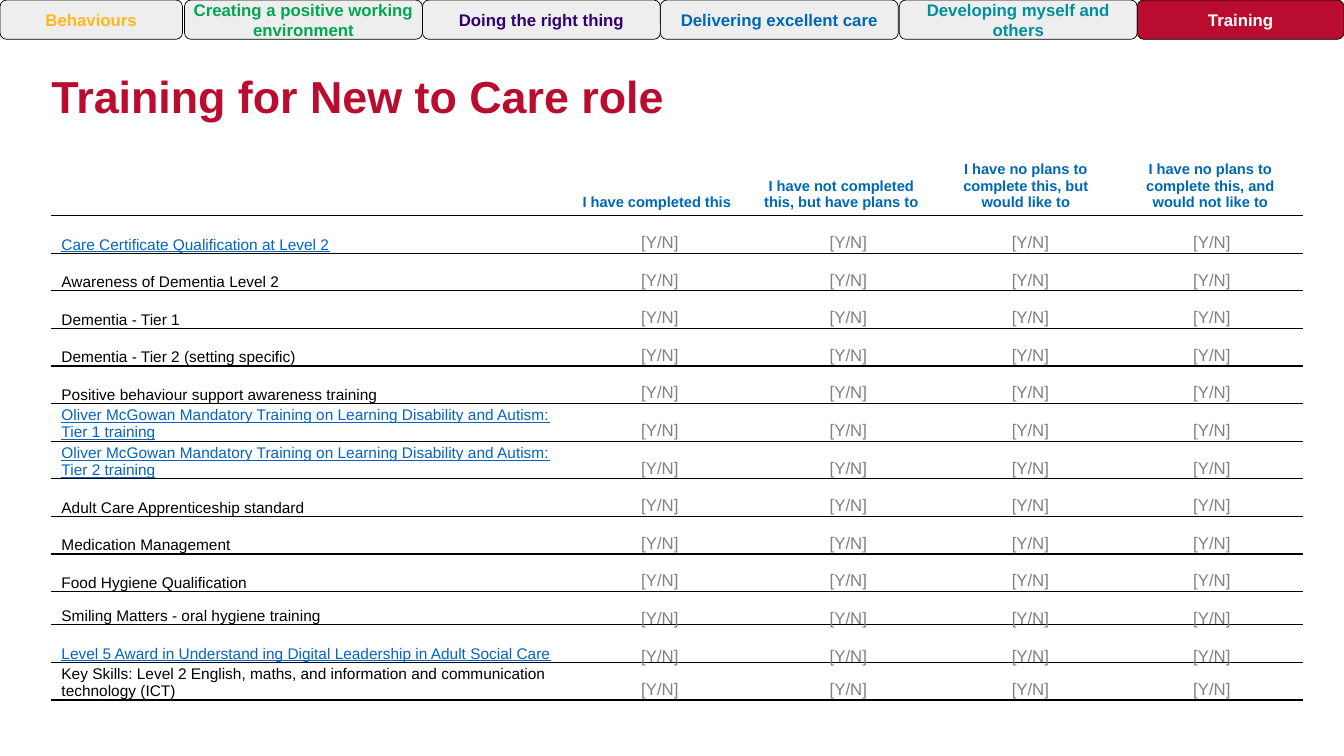
from pptx import Presentation
from pptx.dml.color import RGBColor
from pptx.enum.shapes import MSO_SHAPE
from pptx.enum.text import MSO_ANCHOR, MSO_AUTO_SIZE, PP_ALIGN
from pptx.oxml.ns import qn
from pptx.util import Inches, Pt
from lxml.etree import SubElement

RED = "BA0C2F"
BLUE = "0068B3"
LINK = "0563C1"
BLACK = "000000"
GREY = "CACACA"
ROW = 3.73 / 10

TABS = [
    ("Behaviours", 0, 1.81, "FFB81C"),
    ("Creating a positive working environment", 1.83, 2.36, "00A651"),
    ("Doing the right thing", 4.19, 2.36, "330072"),
    ("Delivering excellent care", 6.55, 2.36, BLUE),
    ("Developing myself and others", 8.92, 2.36, "008F9C"),
    ("Training", 11.28, 2.05, "FFFFFF"),
]
HEADS = [
    "",
    "I have completed this",
    "I have not completed this, but have plans to",
    "I have no plans to complete this, but would like to",
    "I have no plans to complete this, and would not like to",
]
COURSES = [
    ("Care Certificate Qualification at Level 2", LINK),
    ("Awareness of Dementia Level 2", BLACK),
    ("Dementia - Tier 1", BLACK),
    ("Dementia - Tier 2 (setting specific)", BLACK),
    ("Positive behaviour support awareness training", BLACK),
    ("Oliver McGowan Mandatory Training on Learning Disability and Autism: Tier 1 training", LINK),
    ("Oliver McGowan Mandatory Training on Learning Disability and Autism: Tier 2 training", LINK),
    ("Adult Care Apprenticeship standard", BLACK),
    ("Medication Management", BLACK),
    ("Food Hygiene Qualification", BLACK),
    ("Smiling Matters - oral hygiene training", BLACK),
    ("Level 5 Award in Understand ing Digital Leadership in Adult Social Care", LINK),
    ("Key Skills: Level 2 English, maths, and information and communication technology (ICT)", BLACK),
]
ANSWERS = [(5.67, 1.75), (7.5, 1.83), (9.42, 1.6), (11.22, 1.6)]


def color(code):
    return RGBColor.from_string(code)


def write(frame, text, size, code, bold=False, align=PP_ALIGN.CENTER):
    frame.text = text
    para = frame.paragraphs[0]
    para.alignment = align
    for run in para.runs:
        run.font.name = "Arial"
        run.font.size = Pt(size)
        run.font.bold = bold
        run.font.color.rgb = color(code)
        run.font.underline = code == LINK


def inset(item, left, top, right, bottom):
    item.margin_left, item.margin_top = Inches(left), Inches(top)
    item.margin_right, item.margin_bottom = Inches(right), Inches(bottom)


def add_tab(slide, text, left, width, code, active):
    tab = slide.shapes.add_shape(
        MSO_SHAPE.ROUNDED_RECTANGLE, Inches(left), 0, Inches(width), Inches(0.39))
    tab.shadow.inherit = False
    tab.fill.solid()
    tab.fill.fore_color.rgb = color(RED if active else GREY)
    if not active:
        tint = tab.fill._xPr.find(qn("a:solidFill"))[0]
        SubElement(tint, qn("a:alpha"), val="30000")
    tab.line.color.rgb = color(BLACK)
    tab.line.width = Pt(0.5)
    frame = tab.text_frame
    frame.word_wrap = True
    frame.vertical_anchor = MSO_ANCHOR.MIDDLE
    inset(frame, 0, 0.05, 0, 0.05)
    write(frame, text, 12, code, True)


def rule(cell, sides):
    props = cell._tc.get_or_add_tcPr()
    for side in ("lnL", "lnR", "lnT", "lnB"):
        line = SubElement(props, qn("a:" + side), w=str(Pt(1)))
        if side in sides:
            paint = SubElement(line, qn("a:solidFill"))
            SubElement(paint, qn("a:srgbClr"), val=BLACK)
        else:
            SubElement(line, qn("a:noFill"))


def add_grid(slide):
    frame = slide.shapes.add_table(
        len(COURSES) + 1, len(HEADS), Inches(0.51), Inches(1.5), Inches(12.41), Inches(5.45))
    table = frame.table
    table.first_row = False
    table.horz_banding = False
    for spot, col in enumerate(table.columns):
        col.width = Inches(1.83 if spot else 5.09)
    for spot, row in enumerate(table.rows):
        row.height = Inches(ROW if spot else 0.64)
        for cell in row.cells:
            rule(cell, ("lnT", "lnB") if spot else ("lnB",))
            cell.vertical_anchor = MSO_ANCHOR.BOTTOM
            inset(cell, 0.1, 0.01, 0.01, 0)
            if spot:
                cell.fill.background()
            else:
                cell.fill.solid()
                cell.fill.fore_color.rgb = color("FFFFFF")
    table.rows[11].height = Inches(0.33)
    for spot, head in enumerate(HEADS):
        cell = table.cell(0, spot)
        inset(cell, 0.11, 0.05, 0.11, 0.05)
        write(cell.text_frame, head, 10.5, BLUE, True)
    for spot, (name, code) in enumerate(COURSES, 1):
        write(table.cell(spot, 0).text_frame, name, 11, code, align=PP_ALIGN.LEFT)


def add_answer(slide, left, top, width):
    box = slide.shapes.add_textbox(Inches(left), Inches(top), Inches(width), Inches(0.3))
    box.text_frame.word_wrap = True
    write(box.text_frame, "[Y/N]", 12, "808080")


def set_title(slide, text):
    title = slide.shapes.title
    title.left, title.top = Inches(0.41), Inches(0.58)
    title.width, title.height = Inches(6.4), Inches(0.69)
    frame = title.text_frame
    frame.auto_size = MSO_AUTO_SIZE.NONE
    frame.word_wrap = True
    frame.vertical_anchor = MSO_ANCHOR.TOP
    inset(frame, 0.1, 0.1, 0.1, 0.1)
    write(frame, text, 32, RED, True, PP_ALIGN.LEFT)


def main():
    deck = Presentation()
    deck.slide_width, deck.slide_height = Inches(13.33), Inches(7.5)
    slide = deck.slides.add_slide(deck.slide_layouts[5])
    set_title(slide, "Training for New to Care role")
    for text, left, width, code in TABS:
        add_tab(slide, text, left, width, code, text == "Training")
    add_grid(slide)
    for spot in range(len(COURSES)):
        top = min(2.25 + spot * ROW, 6.68)
        for left, width in ANSWERS:
            add_answer(slide, left, top, width)
    deck.save("out.pptx")


if __name__ == "__main__":
    main()
